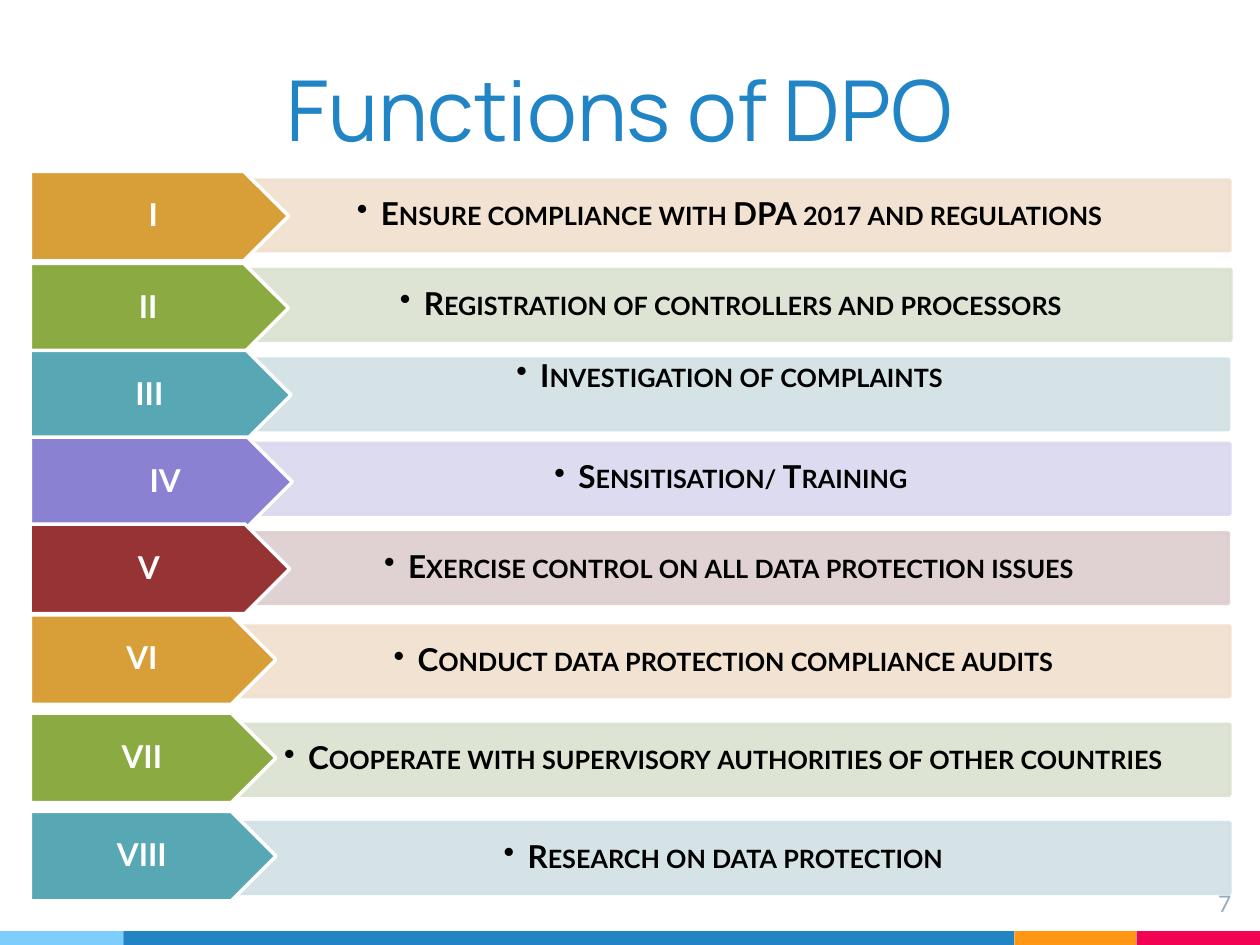
from dataclasses import dataclass
from itertools import accumulate

from lxml import etree
from pptx import Presentation
from pptx.dml import color
from pptx.enum import shapes, text
from pptx.oxml import ns
from pptx.util import Inches, Pt


@dataclass(frozen=True)
class Theme:
    head: str = "Manrope"
    body: str = "Lato"
    blue: str = "2185C5"
    sky: str = "7ECEFD"
    orange: str = "FF9715"
    pink: str = "F20253"
    grey: str = "97ABBC"
    white: str = "FFFFFF"
    black: str = "000000"
    gold: tuple = ("D89F39", "F0DFCE")
    green: tuple = ("8BAB42", "DAE2CF")
    teal: tuple = ("57A7B5", "D1E1E5")
    violet: tuple = ("8B81D2", "DAD8EE")
    red: tuple = ("963334", "DDCECE")
    title: int = 48
    label: int = 18
    small: int = 13


@dataclass(frozen=True)
class Row:
    mark: str
    duty: str
    tone: tuple
    tag_top: float
    tag_width: float
    bar_left: float
    bar_top: float
    bar_width: float
    pad: float = 0
    high: bool = False


THEME = Theme()
TAG_LEFT, TAG_HIGH, BAR_HIGH = 0.24, 0.71, 0.56
ROWS = [
    Row("I", "Ensure compliance with DPA 2017 and regulations", THEME.gold,
        1.36, 2.05, 1.82, 1.43, 7.94, pad=0.08),
    Row("II", "Registration of controllers and processors", THEME.green,
        2.09, 2.05, 1.83, 2.14, 7.94),
    Row("III", "Investigation of complaints", THEME.teal,
        2.78, 2.07, 1.83, 2.85, 7.92, high=True),
    Row("IV", "Sensitisation/ Training", THEME.violet,
        3.47, 2.08, 1.84, 3.52, 7.92, pad=0.24),
    Row("V", "Exercise control on all data protection issues", THEME.red,
        4.16, 2.06, 1.82, 4.23, 7.93),
    Row("VI", "Conduct data protection compliance audits", THEME.gold,
        4.88, 1.95, 1.72, 4.97, 8.04),
    Row("VII", "Cooperate with supervisory authorities of other countries",
        THEME.green, 5.66, 1.95, 1.72, 5.75, 8.04),
    Row("VIII", "Research on data protection", THEME.teal,
        6.44, 1.95, 1.72, 6.53, 8.04),
]


def rgb(code: str) -> color.RGBColor:
    return color.RGBColor.from_string(code)


def style(para, face: str, size: int, code: str, bold: bool = False) -> None:
    font = para.font
    font.name, font.size, font.bold = face, Pt(size), bold
    font.color.rgb = rgb(code)


def inset(frame, side: float, edge: float) -> None:
    frame.margin_left = frame.margin_right = Inches(side)
    frame.margin_top = frame.margin_bottom = Inches(edge)


def block(slide, kind, left: float, top: float, width: float, high: float,
          code: str):
    shape = slide.shapes.add_shape(
        kind, Inches(left), Inches(top), Inches(width), Inches(high))
    shape.shadow.inherit = False
    shape.fill.solid()
    shape.fill.fore_color.rgb = rgb(code)
    shape.line.fill.background()
    return shape


def edge(shape, code: str) -> None:
    shape.line.color.rgb = rgb(code)
    shape.line.width = Pt(2)


def fade(shape, share: int) -> None:
    for tint in shape._element.spPr.iter(ns.qn("a:srgbClr")):
        etree.SubElement(tint, ns.qn("a:alpha"), val=str(share * 1000))


def write(shape, words: str, code: str, side: float, rim: float):
    frame = shape.text_frame
    frame.word_wrap = True
    frame.vertical_anchor = text.MSO_ANCHOR.MIDDLE
    inset(frame, side, rim)
    para = frame.paragraphs[0]
    para.text = words
    para.alignment = text.PP_ALIGN.CENTER
    para.line_spacing = 0.9
    style(para, THEME.body, THEME.label, code, True)
    return para


def bullet(para) -> None:
    props = para._p.pPr
    props.set("marL", str(Inches(0.19)))
    props.set("indent", str(Inches(-0.19)))
    base = props.find(ns.qn("a:defRPr"))
    base.set("cap", "small")
    dot = etree.Element(ns.qn("a:buChar"), char="•")
    base.addprevious(dot)


def draw(slide, row: Row) -> None:
    deep, pale = row.tone
    bar = block(slide, shapes.MSO_SHAPE.FLOWCHART_PROCESS, row.bar_left,
                row.bar_top, row.bar_width, BAR_HIGH, pale)
    edge(bar, pale)
    fade(bar, 90)
    bullet(write(bar, row.duty, THEME.black, 0.01, 0.01))
    if row.high:
        bar.text_frame.vertical_anchor = text.MSO_ANCHOR.TOP
    tag = block(slide, shapes.MSO_SHAPE.PENTAGON, TAG_LEFT, row.tag_top,
                row.tag_width, TAG_HIGH, deep)
    edge(tag, THEME.white)
    write(tag, row.mark, THEME.white, 0.07, 0.04)
    tag.text_frame.margin_left = Inches(0.07 + row.pad)


def strip(slide) -> None:
    parts = [(0.98, THEME.sky), (7.07, THEME.blue),
             (0.97, THEME.orange), (0.98, THEME.pink)]
    ends = accumulate(width for width, _ in parts)
    for (width, code), end in zip(parts, ends):
        block(slide, shapes.MSO_SHAPE.RECTANGLE, end - width, 7.39, width,
              0.11, code)


def head(slide, words: str) -> None:
    title = slide.shapes.title
    title.left, title.top = Inches(2.17), Inches(0.04)
    title.width, title.height = Inches(8.07), Inches(1.32)
    frame = title.text_frame
    frame.text = words
    frame.auto_size = text.MSO_AUTO_SIZE.NONE
    frame.vertical_anchor = text.MSO_ANCHOR.BOTTOM
    inset(frame, 0.1, 0.1)
    para = frame.paragraphs[0]
    para.alignment = text.PP_ALIGN.LEFT
    style(para, THEME.head, THEME.title, THEME.blue)


def number(slide, words: str) -> None:
    box = slide.shapes.add_textbox(
        Inches(9.27), Inches(6.96), Inches(0.6), Inches(0.46))
    frame = box.text_frame
    frame.word_wrap = True
    inset(frame, 0.1, 0.1)
    para = frame.paragraphs[0]
    para.text = words
    para.alignment = text.PP_ALIGN.RIGHT
    style(para, THEME.body, THEME.small, THEME.grey)


def main() -> None:
    deck = Presentation()
    deck.slide_width, deck.slide_height = Inches(10), Inches(7.5)
    slide = deck.slides.add_slide(deck.slide_layouts[5])
    strip(slide)
    head(slide, "Functions of DPO")
    number(slide, "7")
    for row in ROWS:
        draw(slide, row)
    deck.save("out.pptx")


if __name__ == "__main__":
    main()
